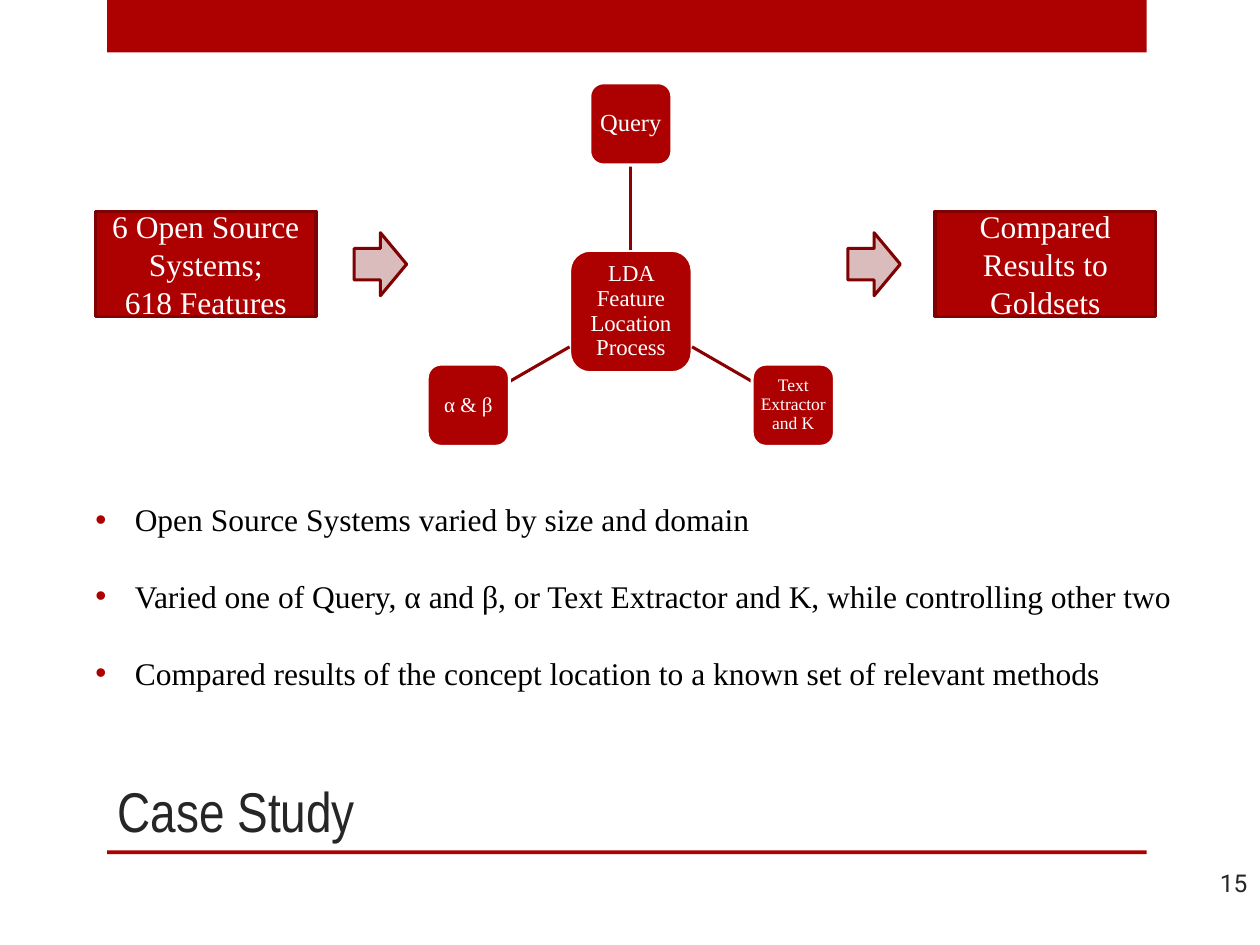
import math
from lxml import etree
from pptx import Presentation, util as u
from pptx.dml.color import RGBColor
from pptx.enum import shapes as s, text as t
from pptx.oxml.ns import qn

RED, DARK, EDGE, PINK = "AD0101", "8B0101", "800101", "DBBCBC"
WHITE, BLACK, GREY = "FFFFFF", "000000", "262626"
SERIF = "Times New Roman"
TITLE = "Case Study"
PAGE = "15"
POINTS = [
    "Open Source Systems varied by size and domain",
    "Varied one of Query, α and β, or Text Extractor and K, while controlling other two",
    "Compared results of the concept location to a known set of relevant methods",
]
HUB = ("LDA Feature Location Process", 13)
NODES = [("Query", 14, -90), ("Text Extractor and K", 10, 30), ("α & β", 12, 150)]
STEPS = [(54.6, ["6 Open Source Systems;", "618 Features"]),
         (534.3, ["Compared Results to Goldsets"])]
ARROWS = [202.4, 484.5]
BARS = [(0, 30), (486, 2.1)]
CX, CY, RADIUS = 360.5, 178, 107.2
HUB_SIZE, NODE_SIZE = 70, 47
MID, CENTER = t.MSO_ANCHOR.MIDDLE, t.PP_ALIGN.CENTER


def rgb(code):
    return RGBColor.from_string(code)


def place(shape, *box):
    shape.left, shape.top, shape.width, shape.height = map(u.Pt, box)


def write(shape, lines, size, color, name=SERIF, align=CENTER, anchor=MID):
    frame = shape.text_frame
    frame.text = "\n".join(lines)
    frame.word_wrap = True
    frame.auto_size = t.MSO_AUTO_SIZE.NONE
    frame.vertical_anchor = anchor
    for para in frame.paragraphs:
        para.alignment = align
        para.font.size = u.Pt(size)
        para.font.name = name
        para.font.color.rgb = rgb(color)
    return frame


def draw(kind, box, fill, edge=None):
    shape = slide.shapes.add_shape(kind, *map(u.Pt, box))
    shape.shadow.inherit = False
    shape.fill.solid()
    shape.fill.fore_color.rgb = rgb(fill)
    if edge:
        shape.line.color.rgb = rgb(edge)
        shape.line.width = u.Pt(1.75)
    else:
        shape.line.fill.background()
    return shape


def node(label, size, x, y, side):
    box = (x - side / 2, y - side / 2, side, side)
    shape = draw(s.MSO_SHAPE.ROUNDED_RECTANGLE, box, RED, WHITE)
    frame = write(shape, [label], size, WHITE)
    frame.margin_left = frame.margin_right = u.Pt(2)
    frame.margin_top = frame.margin_bottom = u.Pt(2)
    frame.paragraphs[0].line_spacing = 0.9


def spoke(angle):
    dx, dy = math.cos(angle), math.sin(angle)
    reach = max(abs(dx), abs(dy))
    ends = []
    for dist in (HUB_SIZE / 2 / reach, RADIUS - NODE_SIZE / 2 / reach):
        ends += [u.Pt(CX + dist * dx), u.Pt(CY + dist * dy)]
    line = slide.shapes.add_connector(s.MSO_CONNECTOR.STRAIGHT, *ends)
    line.line.color.rgb = rgb(DARK)
    line.line.width = u.Pt(1.75)
    etree.SubElement(line._element.spPr, qn("a:effectLst"))


def bullet(para):
    para.space_before = u.Pt(0)
    para.space_after = u.Pt(22.3)
    props = para._p.get_or_add_pPr()
    props.set("marL", str(u.Pt(22.5)))
    props.set("indent", str(u.Pt(-22.5)))
    tint = etree.Element(qn("a:buClr"))
    etree.SubElement(tint, qn("a:srgbClr"), val=RED)
    face = etree.Element(qn("a:buFont"), typeface="Arial")
    mark = etree.Element(qn("a:buChar"), char="•")
    font = props.find(qn("a:defRPr"))
    for item in (tint, face, mark):
        font.addprevious(item)


deck = Presentation()
deck.slide_width, deck.slide_height = u.Pt(720), u.Pt(540)
slide = deck.slides.add_slide(deck.slide_layouts[1])

for top, high in BARS:
    draw(s.MSO_SHAPE.RECTANGLE, (61.2, top, 594, high), RED)

title, body = slide.shapes.title, slide.placeholders[1]
place(title, 60, 360, 534, 126)
write(title, [TITLE], 32, GREY, "Arial Narrow", t.PP_ALIGN.LEFT, t.MSO_ANCHOR.BOTTOM)
place(body, 47.3, 282.3, 646, 181)
frame = write(body, POINTS, 18, BLACK, SERIF, t.PP_ALIGN.LEFT, t.MSO_ANCHOR.TOP)
for para in frame.paragraphs:
    bullet(para)

node(*HUB, CX, CY, HUB_SIZE)
for label, size, turn in NODES:
    angle = math.radians(turn)
    spoke(angle)
    node(label, size, CX + RADIUS * math.cos(angle),
         CY + RADIUS * math.sin(angle), NODE_SIZE)

for left, lines in STEPS:
    step = draw(s.MSO_SHAPE.RECTANGLE, (left, 120.7, 126, 60), RED, EDGE)
    write(step, lines, 18, WHITE)
for left in ARROWS:
    draw(s.MSO_SHAPE.RIGHT_ARROW, (left, 133, 30, 36), PINK, EDGE)

page = slide.shapes.add_textbox(*map(u.Pt, (672, 488.5, 48, 32)))
write(page, [PAGE], 14, GREY, "Roboto", t.PP_ALIGN.RIGHT)

deck.save("out.pptx")
